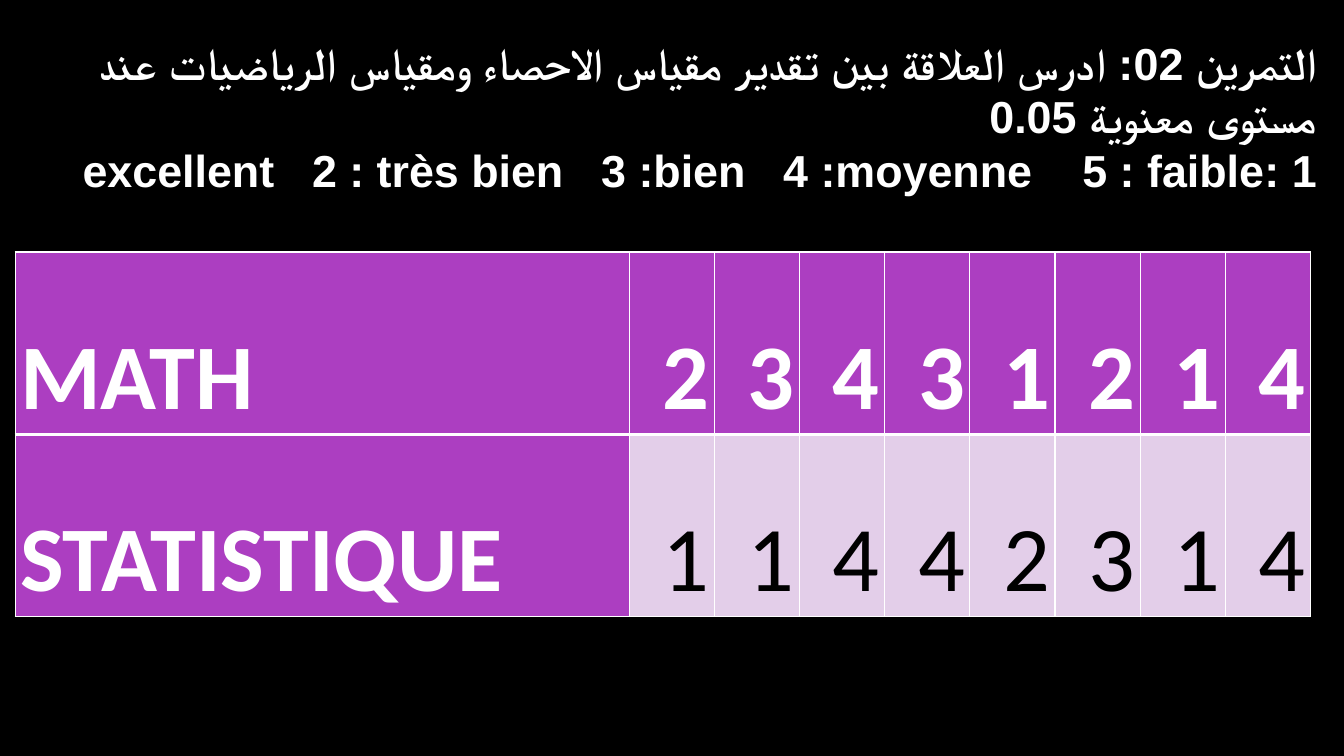
"""Builds a slide with an Arabic exercise statement and a table of grades."""
from dataclasses import dataclass

from lxml import etree
from pptx import Presentation
from pptx import util as u
from pptx.dml.color import RGBColor
from pptx.enum import text
from pptx.oxml import ns


@dataclass(frozen=True)
class Theme:
    background: str = "000000"
    light: str = "FFFFFF"
    dark: str = "000000"
    header: str = "AC3EC1"
    band: str = "E3CEE9"
    title_font: str = "Arial"
    table_font: str = "Calibri"
    title_size: int = 32
    table_size: int = 66
    space_width: float = 8.9
    thin: int = 1
    thick: int = 3


STATEMENT = "التمرين 02: ادرس العلاقة بين تقدير مقياس الاحصاء ومقياس الرياضيات عند مستوى معنوية 0.05"
GRADES = ["1\u00a0:excellent", "2\u00a0: très bien", "3\u00a0:bien", "4\u00a0:moyenne", "5\u00a0: faible"]
GAP_SPACES = [3, 3, 3, 4]
SCORES = [
    ["MATH", 2, 3, 4, 3, 1, 2, 1, 4],
    ["STATISTIQUE", 1, 1, 4, 4, 2, 3, 1, 4],
]


class GradeSlide:
    def __init__(self, presentation, theme):
        self.theme = theme
        self.slide = presentation.slides.add_slide(presentation.slide_layouts[5])
        fill = self.slide.background.fill
        fill.solid()
        fill.fore_color.rgb = RGBColor.from_string(theme.background)

    def format_run(self, run, font, size, color, bold):
        run.font.name = font
        run.font.size = u.Pt(size)
        run.font.bold = bold
        run.font.color.rgb = RGBColor.from_string(color)

    def add_title(self, left, top, width, height):
        theme = self.theme
        title = self.slide.shapes.title
        title.left, title.top = u.Inches(left), u.Inches(top)
        title.width, title.height = u.Inches(width), u.Inches(height)
        frame = title.text_frame
        frame.word_wrap = True
        frame.auto_size = text.MSO_AUTO_SIZE.SHAPE_TO_FIT_TEXT
        frame.vertical_anchor = text.MSO_ANCHOR.MIDDLE
        frame.text = STATEMENT
        scale = frame.add_paragraph()
        scale.add_run().text = GRADES[0]
        for spaces, grade in zip(GAP_SPACES, GRADES[1:]):
            gap = scale.add_run()
            gap.text = " "
            extra = (spaces - 1) * theme.space_width
            gap.font._element.set("spc", str(round(extra * 100)))
            scale.add_run().text = grade
        for paragraph in frame.paragraphs:
            paragraph.alignment = text.PP_ALIGN.RIGHT
            paragraph._p.get_or_add_pPr().set("rtl", "1")
            for run in paragraph.runs:
                self.format_run(run, theme.title_font, theme.title_size, theme.light, True)
                complex_font = etree.SubElement(run.font._element, ns.qn("a:cs"))
                complex_font.set("typeface", theme.title_font)

    def set_borders(self, cell, widths):
        properties = cell._tc.get_or_add_tcPr()
        for index, (side, width) in enumerate(widths.items()):
            line = etree.Element(ns.qn(f"a:ln{side}"), w=str(u.Pt(width)))
            fill = etree.SubElement(line, ns.qn("a:solidFill"))
            etree.SubElement(fill, ns.qn("a:srgbClr"), val=self.theme.light)
            properties.insert(index, line)

    def format_cell(self, cell, value, is_top, is_label):
        theme = self.theme
        is_header = is_top or is_label
        cell.text = str(value)
        cell.vertical_anchor = text.MSO_ANCHOR.BOTTOM
        cell.margin_left = cell.margin_right = u.Inches(0.05)
        cell.margin_top = cell.margin_bottom = 0
        cell.fill.solid()
        cell.fill.fore_color.rgb = RGBColor.from_string(theme.header if is_header else theme.band)
        paragraph = cell.text_frame.paragraphs[0]
        paragraph.alignment = text.PP_ALIGN.LEFT if is_label else text.PP_ALIGN.RIGHT
        paragraph.line_spacing = 1.15
        color = theme.light if is_header else theme.dark
        self.format_run(paragraph.runs[0], theme.table_font, theme.table_size, color, is_header)
        self.set_borders(cell, {
            "L": theme.thin,
            "R": theme.thin,
            "T": theme.thin if is_top else theme.thick,
            "B": theme.thick if is_top else theme.thin,
        })

    def add_table(self, scores, left, top, width, height, label_width):
        row_count, column_count = len(scores), len(scores[0])
        table = self.slide.shapes.add_table(
            row_count, column_count,
            u.Inches(left), u.Inches(top), u.Inches(width), u.Inches(height),
        ).table
        score_width = (width - label_width) / (column_count - 1)
        for index, column in enumerate(table.columns):
            column.width = u.Inches(score_width if index else label_width)
        for row_index, values in enumerate(scores):
            for column_index, value in enumerate(values):
                cell = table.cell(row_index, column_index)
                self.format_cell(cell, value, row_index == 0, column_index == 0)


def main():
    presentation = Presentation()
    presentation.slide_width = u.Inches(13.33)
    presentation.slide_height = u.Inches(7.5)
    slide = GradeSlide(presentation, Theme())
    slide.add_table(SCORES, 0.15, 2.5, 12.85, 3.62, label_width=6.09)
    slide.add_title(-0.02, 0.29, 13.18, 1.72)
    presentation.save("out.pptx")


if __name__ == "__main__":
    main()
